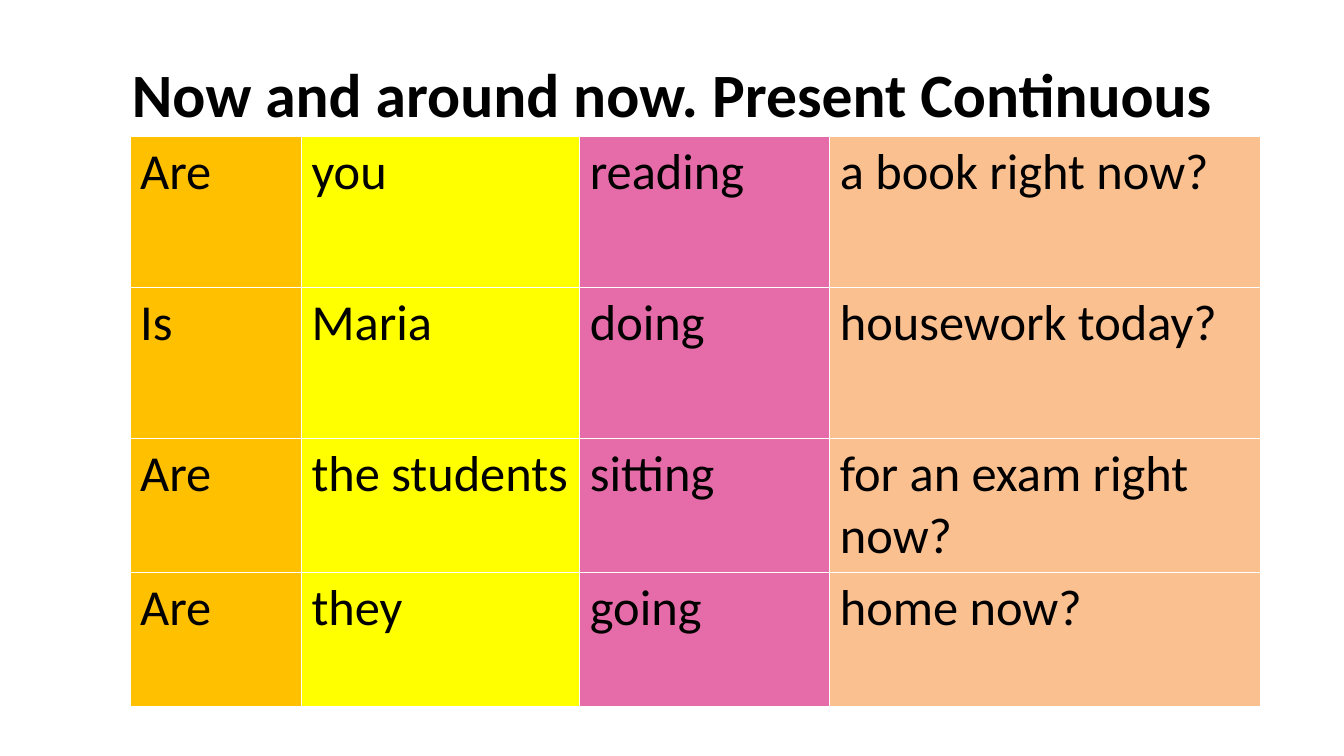
from lxml.etree import SubElement
from pptx import Presentation
from pptx.dml.color import RGBColor
from pptx.enum.text import MSO_ANCHOR, PP_ALIGN
from pptx.oxml.ns import qn
from pptx.util import Inches, Pt

TITLE = "Now and around now. Present Continuous"
QUESTIONS = [
    ("Are", "you", "reading", "a book right now?"),
    ("Is", "Maria", "doing", "housework today?"),
    ("Are", "the students", "sitting", "for an exam right now?"),
    ("Are", "they", "going", "home now?"),
]
COLUMN_WIDTHS = [1.7, 2.76, 2.48, 4.27]
COLUMN_FILLS = ["FFC000", "FFFF00", "E66CA9", "FAC090"]
ROW_HEIGHTS = [1.5, 1.5, 1.33, 1.33]
TITLE_FONT = {"name": "Calibri", "size": Pt(44), "bold": True}
CELL_FONT = {"name": "Calibri", "size": Pt(36), "bold": False}


def color(hex_code):
    return RGBColor.from_string(hex_code)


def write(frame, text, font_values, align):
    para = frame.paragraphs[0]
    para.alignment = align
    span = para.add_run()
    span.text = text
    for name, value in font_values.items():
        setattr(span.font, name, value)
    span.font.color.rgb = color("000000")


def add_title(page):
    title = page.shapes.title
    place = {"left": 0.67, "top": 0.3, "width": 12, "height": 1.25}
    for name, value in place.items():
        setattr(title, name, Inches(value))
    title.text_frame.vertical_anchor = MSO_ANCHOR.MIDDLE
    write(title.text_frame, TITLE, TITLE_FONT, PP_ALIGN.CENTER)


def set_borders(cell, hex_code, width):
    # Borders have to come before the fill in the cell properties
    properties = cell._tc.get_or_add_tcPr()
    for index, side in enumerate(("lnL", "lnR", "lnT", "lnB")):
        line = SubElement(properties, qn(f"a:{side}"), w=str(width))
        fill = SubElement(line, qn("a:solidFill"))
        SubElement(fill, qn("a:srgbClr"), val=hex_code)
        properties.insert(index, line)


def add_question_table(page):
    frame = page.shapes.add_table(
        len(QUESTIONS), len(COLUMN_WIDTHS), Inches(1.29), Inches(1.35),
        Inches(sum(COLUMN_WIDTHS)), Inches(sum(ROW_HEIGHTS)))
    table = frame.table
    table.first_row = table.horz_banding = False
    for column, width in zip(table.columns, COLUMN_WIDTHS):
        column.width = Inches(width)
    for row, height, words in zip(table.rows, ROW_HEIGHTS, QUESTIONS):
        row.height = Inches(height)
        for cell, word, fill in zip(row.cells, words, COLUMN_FILLS):
            write(cell.text_frame, word, CELL_FONT, PP_ALIGN.LEFT)
            cell.fill.solid()
            cell.fill.fore_color.rgb = color(fill)
            set_borders(cell, "FFFFFF", Pt(1))


def main():
    deck = Presentation()
    deck.slide_width, deck.slide_height = Inches(13.33), Inches(7.5)
    # Title-only layout
    page = deck.slides.add_slide(deck.slide_layouts[5])
    add_title(page)
    add_question_table(page)
    deck.save("out.pptx")


if __name__ == "__main__":
    main()
